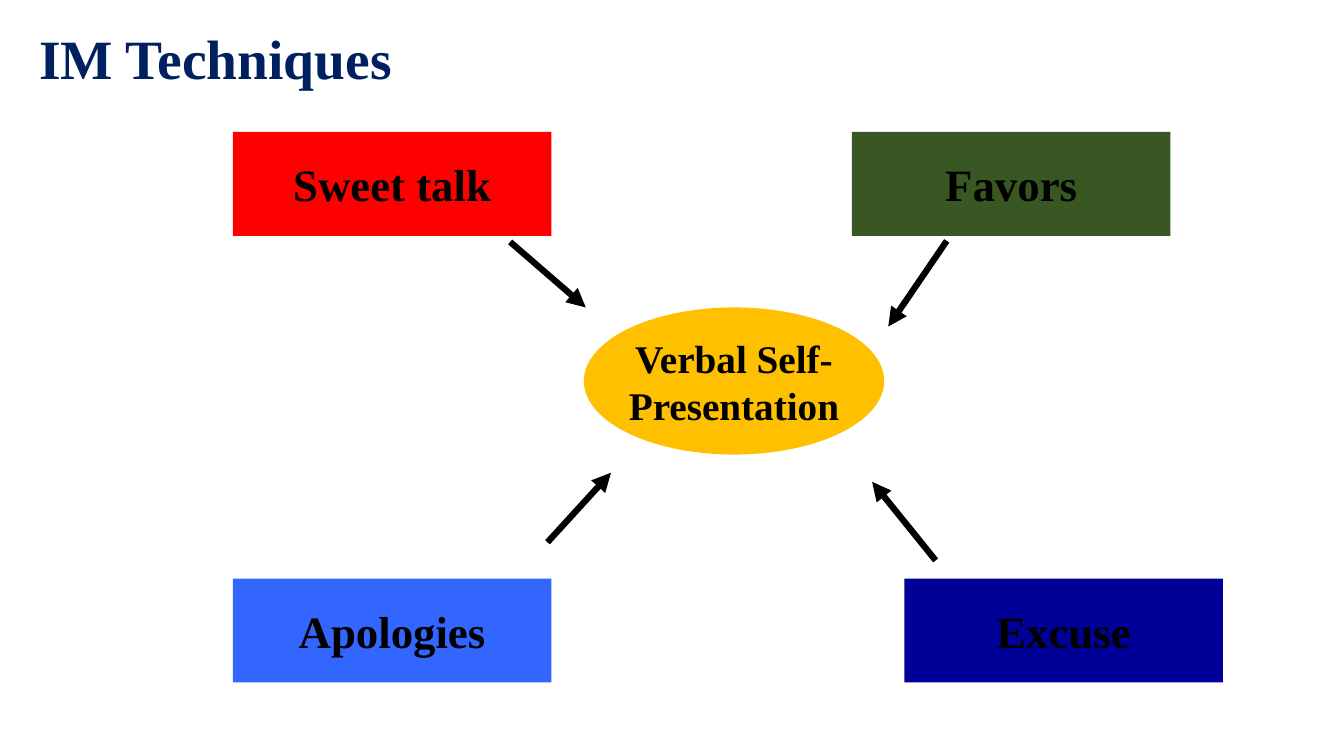
from dataclasses import dataclass

from lxml import etree
from pptx import Presentation
from pptx.dml.color import RGBColor
from pptx.enum.shapes import MSO_CONNECTOR, MSO_SHAPE
from pptx.enum.text import MSO_ANCHOR, PP_ALIGN
from pptx.oxml.ns import qn
from pptx.slide import Slide
from pptx.text.text import TextFrame
from pptx.util import Inches, Pt

RECTANGLE = MSO_SHAPE.RECTANGLE
ELLIPSE = MSO_SHAPE.OVAL
STRAIGHT = MSO_CONNECTOR.STRAIGHT
MIDDLE = MSO_ANCHOR.MIDDLE
LEFT = PP_ALIGN.LEFT
CENTER = PP_ALIGN.CENTER

BLACK = RGBColor(0x00, 0x00, 0x00)
NAVY = RGBColor(0x00, 0x20, 0x60)
AMBER = RGBColor(0xFF, 0xC0, 0x00)
RED = RGBColor(0xFF, 0x00, 0x00)
GREEN = RGBColor(0x38, 0x57, 0x23)
LIGHT_BLUE = RGBColor(0x33, 0x66, 0xFF)
DARK_BLUE = RGBColor(0x00, 0x00, 0x99)

FONT = "Times New Roman"
BOX_WIDTH, BOX_HEIGHT = 3.16, 1.03
TOP_ROW, BOTTOM_ROW = 1.31, 5.74
LEFT_COLUMN = 2.31


@dataclass(frozen=True)
class Technique:
    """A labelled box and the arrow from it towards the centre."""
    label: str
    color: RGBColor
    left: float
    top: float
    arrow_start: tuple[float, float]
    arrow_end: tuple[float, float]


TECHNIQUES = [
    Technique("Excuse", DARK_BLUE, 8.97, BOTTOM_ROW, (9.28, 5.56), (8.65, 4.78)),
    Technique("Apologies", LIGHT_BLUE, LEFT_COLUMN, BOTTOM_ROW, (5.43, 5.38), (6.06, 4.69)),
    Technique("Sweet talk", RED, LEFT_COLUMN, TOP_ROW, (5.06, 2.4), (5.81, 3.05)),
    Technique("Favors", GREEN, 8.45, TOP_ROW, (9.39, 2.39), (8.81, 3.24)),
]


def write_text(frame: TextFrame, lines: list[str], size: float,
               color: RGBColor, alignment: PP_ALIGN) -> None:
    """Fill one paragraph, with a line break between the lines."""
    frame.vertical_anchor = MIDDLE
    para = frame.paragraphs[0]
    para.alignment = alignment
    for index, line in enumerate(lines):
        if index:
            para.add_line_break()
        span = para.add_run()
        span.text = line
        span.font.name = FONT
        span.font.size = Pt(size)
        span.font.bold = True
        span.font.color.rgb = color


def add_title(page: Slide, text: str) -> None:
    box = page.shapes.add_textbox(Inches(0.29), Inches(0.29), Inches(4.02), Inches(0.64))
    box.text_frame.word_wrap = True
    write_text(box.text_frame, [text], 39.6, NAVY, LEFT)
    box.text_frame.paragraphs[0].line_spacing = 0.9


def add_label_shape(page: Slide, kind: MSO_SHAPE, left: float, top: float,
                    width: float, height: float, color: RGBColor,
                    lines: list[str], size: float) -> None:
    shape = page.shapes.add_shape(kind, Inches(left), Inches(top), Inches(width), Inches(height))
    shape.shadow.inherit = False
    shape.fill.solid()
    shape.fill.fore_color.rgb = color
    shape.line.fill.background()
    shape.text_frame.word_wrap = False
    write_text(shape.text_frame, lines, size, BLACK, CENTER)


def add_arrow(page: Slide, start: tuple[float, float], end: tuple[float, float]) -> None:
    arrow = page.shapes.add_connector(STRAIGHT, *map(Inches, start + end))
    arrow.line.color.rgb = BLACK
    arrow.line.width = Pt(4.5)
    properties = arrow.line._get_or_add_ln()
    etree.SubElement(properties, qn("a:tailEnd"), type="triangle")
    etree.SubElement(properties.getparent(), qn("a:effectLst"))


def main() -> None:
    deck = Presentation()
    deck.slide_width, deck.slide_height = Inches(13.33), Inches(7.5)
    page = deck.slides.add_slide(deck.slide_layouts[6])
    add_label_shape(page, ELLIPSE, 5.79, 3.05, 2.98, 1.46, AMBER,
                    ["Verbal Self-", "Presentation"], 28)
    for technique in TECHNIQUES:
        add_label_shape(page, RECTANGLE, technique.left, technique.top, BOX_WIDTH,
                        BOX_HEIGHT, technique.color, [technique.label], 32)
        add_arrow(page, technique.arrow_start, technique.arrow_end)
    add_title(page, "IM Techniques")
    deck.save("out.pptx")


if __name__ == "__main__":
    main()
